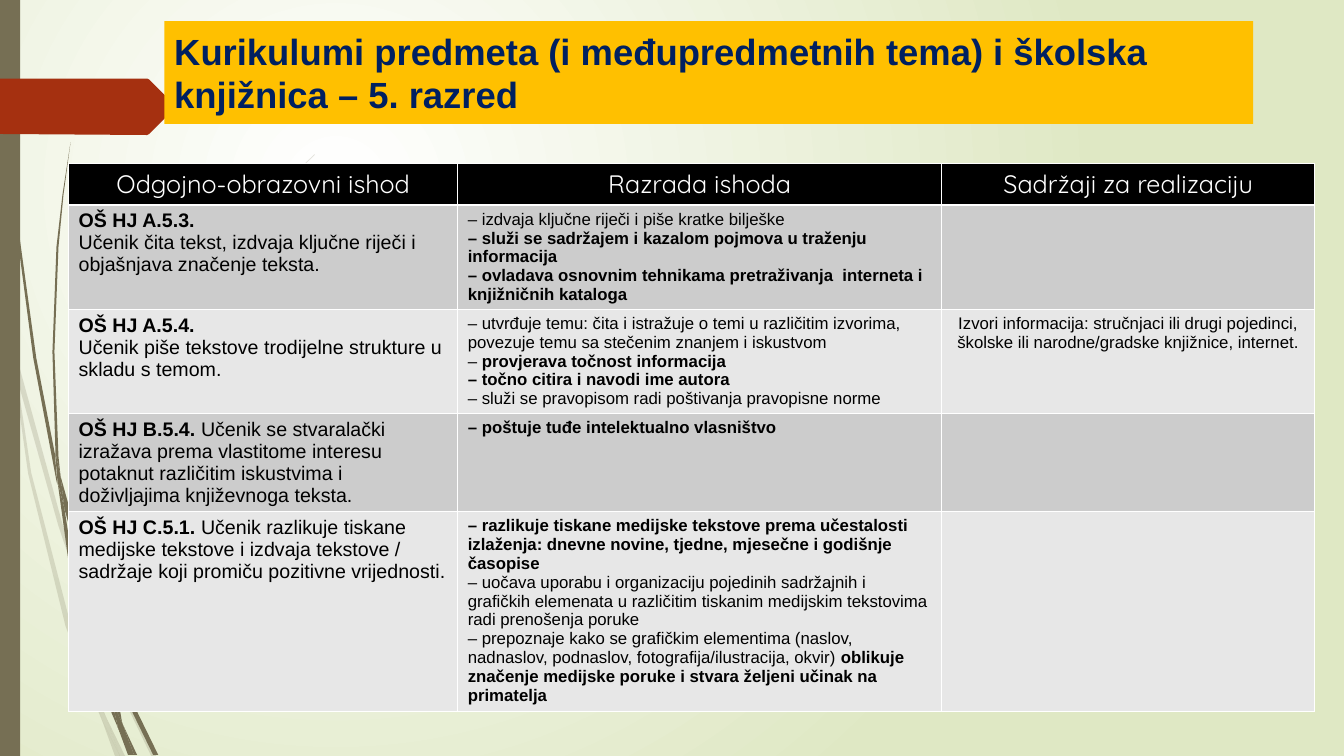
from lxml import etree
from pptx import Presentation
from pptx.dml.color import RGBColor as RGB
from pptx.enum.shapes import MSO_SHAPE as Kind
from pptx.enum.text import MSO_ANCHOR as Anchor, PP_ALIGN as Align
from pptx.oxml.ns import qn
from pptx.util import Emu, Pt

PX = 9144  # EMU per px, 100 px to the inch

WHITE = RGB(0xFF, 0xFF, 0xFF)
BLACK = RGB(0x00, 0x00, 0x00)
LIME = RGB(0xDF, 0xE8, 0xC4)
OLIVE = RGB(0x76, 0x6F, 0x54)
RUST = RGB(0xA5, 0x30, 0x10)
GOLD = RGB(0xFF, 0xC0, 0x00)
NAVY = RGB(0x00, 0x20, 0x60)
GREYS = RGB(0xCC, 0xCC, 0xCC), RGB(0xE7, 0xE7, 0xE7)

# Outlines of the grass blades, as points in px
PALE = [
    [(11, 350), (9, 322), (0, 282), (0, 299), (10, 344)],
    [(58, 522), (84, 599), (85, 586), (62, 520), (14, 345), (17, 376)],
    [(92, 607), (88, 596), (88, 610), (123, 694), (150, 750), (155, 750), (127, 692)],
    [(119, 750), (124, 750), (105, 711)],
    [(93, 683), (70, 619), (31, 469), (17, 376), (11, 350), (28, 470), (65, 621),
     (92, 693), (101, 714), (99, 707)],
    [(84, 599), (87, 646), (93, 683), (96, 692), (105, 711), (103, 706), (91, 646),
     (88, 610), (88, 608)],
    [(88, 584), (93, 522), (110, 462), (160, 349), (229, 245), (268, 198), (290, 175),
     (312, 154), (312, 153), (289, 175), (268, 197), (228, 244), (158, 348),
     (107, 461), (90, 522), (85, 584), (85, 586), (88, 596)],
    [(101, 714), (114, 750), (119, 750)],
    [(88, 608), (88, 610), (88, 596), (85, 586), (84, 599)],
    [(96, 692), (93, 683), (99, 707), (101, 714), (119, 750), (105, 711)],
]
DARK = [
    [(7, 110), (17, 233), (33, 355), (56, 477), (57, 481), (55, 457), (55, 453),
     (36, 355), (19, 232), (8, 109), (5, 48), (4, 0), (3, 0), (4, 48)],
    [(88, 592), (106, 645), (106, 633), (106, 631), (93, 590), (60, 472), (64, 505)],
    [(113, 649), (110, 641), (111, 656), (132, 708), (152, 749), (157, 749), (136, 706)],
    [(110, 691), (98, 657), (72, 556), (64, 505), (57, 477), (68, 557), (93, 659),
     (111, 708), (117, 722), (116, 717)],
    [(60, 472), (58, 453), (54, 349), (58, 245), (63, 193), (70, 141), (62, 193),
     (56, 245), (52, 349), (55, 449)],
    [(133, 749), (136, 749), (122, 719)],
    [(57, 477), (64, 505), (60, 472), (55, 449), (55, 453)],
    [(111, 633), (125, 552), (158, 476), (205, 406), (231, 374), (245, 359), (261, 344),
     (260, 344), (245, 358), (231, 373), (204, 405), (156, 474), (122, 551),
     (106, 631), (110, 641)],
    [(117, 722), (127, 749), (131, 749)],
    [(106, 645), (110, 691), (116, 706), (122, 719), (121, 716), (111, 656), (109, 651)],
    [(106, 645), (109, 651), (111, 656), (110, 641), (106, 631), (106, 633)],
    [(116, 706), (110, 691), (116, 717), (117, 722), (130, 749), (133, 749), (122, 719)],
]
ARROW = [(0, 78), (146, 78), (148, 79), (173, 104), (174, 106), (173, 108),
         (148, 133), (146, 134), (0, 133)]

TITLE = "Kurikulumi predmeta (i međupredmetnih tema) i školska knjižnica – 5. razred"
HEADS = ["Odgojno-obrazovni ishod", "Razrada ishoda", "Sadržaji za realizaciju"]
COLS = [386, 480, 370]
ROWS = [41, 103, 103, 97, 198]
# One list of paragraphs per cell; text between asterisks is bold
BODY = [
    [["*OŠ HJ A.5.3.*",
      "Učenik čita tekst, izdvaja ključne riječi i objašnjava značenje teksta."],
     ["– izdvaja ključne riječi i piše kratke bilješke",
      "*– služi se sadržajem i kazalom pojmova u traženju informacija*",
      "*– ovladava osnovnim tehnikama pretraživanja  interneta i knjižničnih kataloga*"],
     []],
    [["*OŠ HJ A.5.4.*",
      "Učenik piše tekstove trodijelne strukture u skladu s temom."],
     ["– utvrđuje temu: čita i istražuje o temi u različitim izvorima, "
      "povezuje temu sa stečenim znanjem i iskustvom",
      "– *provjerava točnost informacija*",
      "*– točno citira i navodi ime autora*",
      "– služi se pravopisom radi poštivanja pravopisne norme"],
     ["Izvori informacija: stručnjaci ili drugi pojedinci, "
      "školske ili narodne/gradske knjižnice, internet."]],
    [["*OŠ HJ B.5.4. *Učenik se stvaralački izražava prema vlastitome interesu "
      "potaknut različitim iskustvima i doživljajima književnoga teksta."],
     ["*– poštuje tuđe intelektualno vlasništvo*"],
     []],
    [["*OŠ HJ C.5.1. *Učenik razlikuje tiskane medijske tekstove i izdvaja tekstove / "
      "sadržaje koji promiču pozitivne vrijednosti."],
     ["*– razlikuje tiskane medijske tekstove prema učestalosti izlaženja: "
      "dnevne novine, tjedne, mjesečne i godišnje časopise*",
      "– uočava uporabu i organizaciju pojedinih sadržajnih i grafičkih elemenata "
      "u različitim tiskanim medijskim tekstovima radi prenošenja poruke",
      "– prepoznaje kako se grafičkim elementima (naslov, nadnaslov, podnaslov, "
      "fotografija/ilustracija, okvir) *oblikuje značenje medijske poruke "
      "i stvara željeni učinak na primatelja*"],
     []],
]


def px(*nums):
    return [Emu(n * PX) for n in nums]


def write(frame, paras, size=12, font="Arial", color=BLACK, align=Align.LEFT):
    for i, text in enumerate(paras):
        para = frame.paragraphs[0] if i == 0 else frame.add_paragraph()
        para.alignment = align
        for j, part in enumerate(text.split("*")):
            if part:
                run = para.add_run()
                run.text = part
                run.font.size, run.font.name = Pt(size), font
                run.font.color.rgb, run.font.bold = color, j % 2 == 1


def paint(shape, color, alpha=100):
    shape.shadow.inherit = False
    shape.fill.solid()
    shape.fill.fore_color.rgb = color
    shape.line.fill.background()
    if alpha < 100:
        tone = next(shape.element.spPr.iter(qn("a:srgbClr")))
        etree.SubElement(tone, qn("a:alpha"), val=str(alpha * 1000))


def box(shapes, spot, color):
    shape = shapes.add_shape(Kind.RECTANGLE, *px(*spot))
    paint(shape, color)
    return shape


def outline(shapes, dots, color, alpha=100):
    pen = shapes.build_freeform(*dots[0], scale=PX)
    pen.add_line_segments(dots[1:], close=True)
    paint(pen.convert_to_shape(), color, alpha)


def backdrop(slide):
    fill = slide.background.fill
    fill.gradient()
    for stop, color, place in zip(fill.gradient_stops, (WHITE, LIME), (0, 1)):
        stop.color.rgb, stop.position = color, place
    grad = next(slide.element.iter(qn("a:gradFill")))
    grad.remove(grad.find(qn("a:lin")))
    ring = etree.SubElement(grad, qn("a:path"), path="circle")
    etree.SubElement(ring, qn("a:fillToRect"), l="50000", t="50000",
                     r="100000", b="100000")


def edge(cell, side, width=1):
    line = etree.SubElement(cell._tc.get_or_add_tcPr(), qn("a:ln" + side),
                            w=str(Pt(width)))
    solid = etree.SubElement(line, qn("a:solidFill"))
    etree.SubElement(solid, qn("a:srgbClr"), val=str(WHITE))


def fill_cell(cell, paras, back, **form):
    for side in "LRTB":
        edge(cell, side)
    cell.fill.solid()
    cell.fill.fore_color.rgb = back
    write(cell.text_frame, paras, **form)


def grid(shapes):
    table = shapes.add_table(len(ROWS), len(COLS),
                             *px(68, 162, sum(COLS), sum(ROWS))).table
    for col, wide in zip(table.columns, px(*COLS)):
        col.width = wide
    for row, high in zip(table.rows, px(*ROWS)):
        row.height = high
    for c, head in enumerate(HEADS):
        fill_cell(table.cell(0, c), [head], BLACK, size=18, font="Quicksand",
                  color=WHITE, align=Align.CENTER)
    for r, line in enumerate(BODY):
        for c, paras in enumerate(line):
            fill_cell(table.cell(r + 1, c), paras, GREYS[r % 2],
                      size=14 if c == 0 else 12,
                      align=Align.CENTER if c == 2 else Align.LEFT)


def main():
    deck = Presentation()
    deck.slide_width, deck.slide_height = px(1333, 750)
    slide = deck.slides.add_slide(deck.slide_layouts[6])
    shapes = slide.shapes

    # Background, grass and side bar
    backdrop(slide)
    for blades, alpha in ((PALE, 20), (DARK, 100)):
        group = shapes.add_group_shape()
        for dots in blades:
            outline(group.shapes, dots, OLIVE, alpha)
    box(shapes, (0, 0, 20, 750), OLIVE)
    outline(shapes, ARROW, RUST)

    # Title
    title = box(shapes, (163, 21, 1080, 102), GOLD).text_frame
    title.word_wrap, title.vertical_anchor = True, Anchor.MIDDLE
    write(title, [f"*{TITLE}*"], size=26, color=NAVY)

    # Outcomes
    grid(shapes)
    deck.save("out.pptx")


if __name__ == "__main__":
    main()
